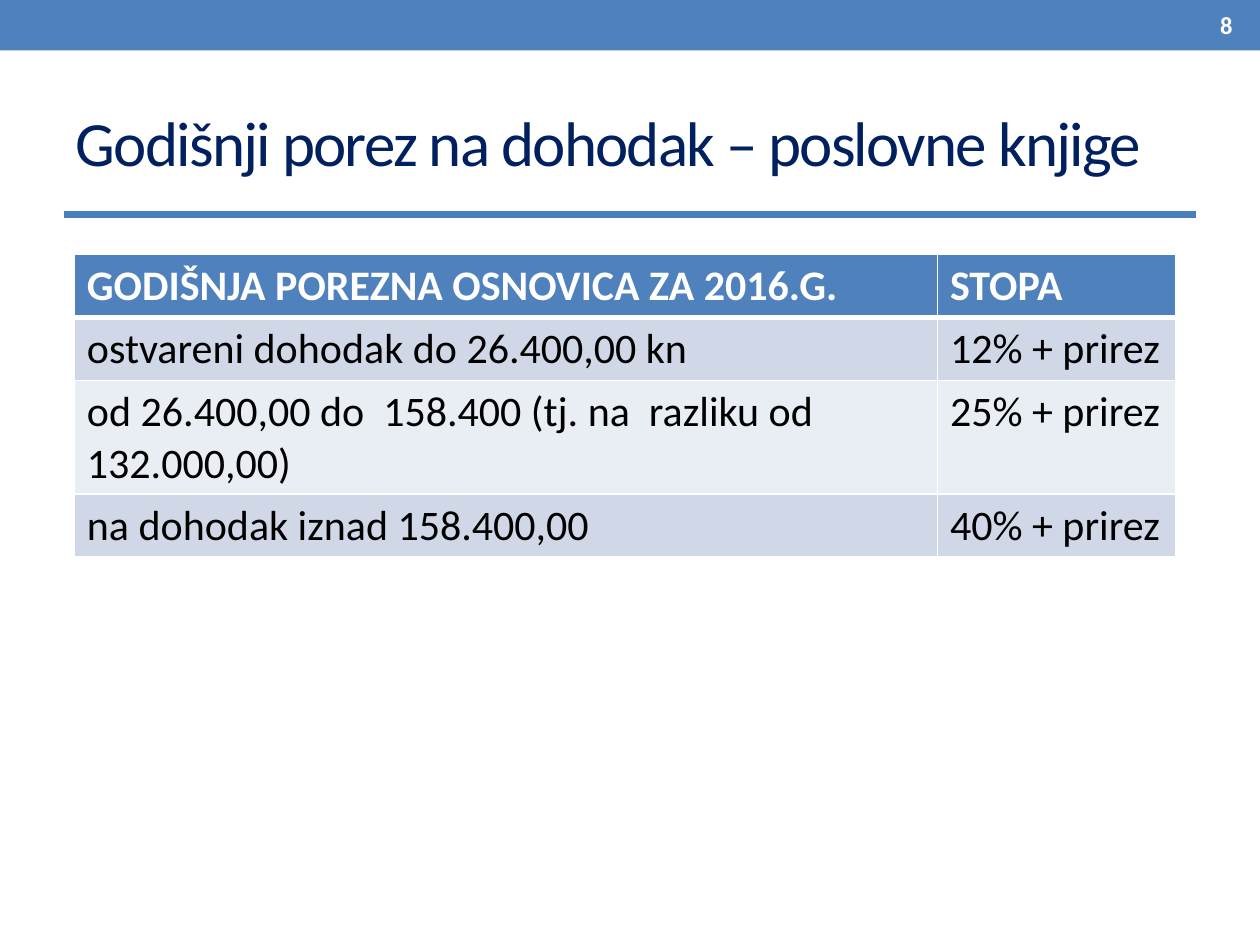
import pptx
import pptx.util
import pptx.dml.color
import pptx.enum.shapes
import pptx.enum.text
import pptx.oxml
import pptx.oxml.ns

Inches, Pt = pptx.util.Inches, pptx.util.Pt
ALIGN, ANCHOR = pptx.enum.text.PP_ALIGN, pptx.enum.text.MSO_ANCHOR

WIDTH, HEIGHT = 10, 7.5
TITLE = "Godišnji porez na dohodak – poslovne knjige"
PAGE_NUMBER = "8"
ROWS = [
    ("GODIŠNJA POREZNA OSNOVICA ZA 2016.G.", "STOPA"),
    ("ostvareni dohodak do 26.400,00 kn", "12% + prirez"),
    ("od 26.400,00 do  158.400 (tj. na  razliku od 132.000,00)", "25% + prirez"),
    ("na dohodak iznad 158.400,00", "40% + prirez"),
]
COLUMN_WIDTHS = (6.85, 1.89)
ROW_HEIGHTS = (0.5, 0.5, 0.9, 0.5)
BLUE, WHITE, BLACK, NAVY = "4F81BD", "FFFFFF", "000000", "002060"
BANDS = ("D0D8E8", "E9EDF4")


def color(value):
    return pptx.dml.color.RGBColor.from_string(value)


def fill(target, value):
    target.fill.solid()
    target.fill.fore_color.rgb = color(value)


def write(tf, text, size, value, bold=False, align=ALIGN.LEFT):
    tf.text = text
    p = tf.paragraphs[0]
    p.alignment = align
    font = p.runs[0].font
    font.name, font.size, font.bold = "Calibri", Pt(size), bold
    font.color.rgb = color(value)


def add_borders(cell, bottom):
    """Draw white cell edges, 1 pt wide except at the bottom."""
    tcPr = cell._tc.get_or_add_tcPr()
    for i, (side, width) in enumerate(zip("LRTB", (1, 1, 1, bottom))):
        tcPr.insert(i, pptx.oxml.parse_xml(
            f'<a:ln{side} {pptx.oxml.ns.nsdecls("a")} w="{Pt(width)}">'
            f'<a:solidFill><a:srgbClr val="{WHITE}"/></a:solidFill></a:ln{side}>'))


prs = pptx.Presentation()
prs.slide_width, prs.slide_height = Inches(WIDTH), Inches(HEIGHT)
s = prs.slides.add_slide(prs.slide_layouts[5])

band = s.shapes.add_shape(pptx.enum.shapes.MSO_SHAPE.RECTANGLE,
                          0, 0, Inches(WIDTH), Inches(0.4))
band.shadow.inherit = False
fill(band, BLUE)
band.line.fill.background()

rule = s.shapes.add_connector(pptx.enum.shapes.MSO_CONNECTOR.STRAIGHT,
                              Inches(0.51), Inches(1.7), Inches(WIDTH - 0.51), Inches(1.7))
rule.line.color.rgb = color("4B7EBC")
rule.line.width = Pt(4)
rule._element.spPr.append(pptx.oxml.parse_xml(
    f'<a:effectLst {pptx.oxml.ns.nsdecls("a")}/>'))

title = s.shapes.title
title.left, title.top, title.width, title.height = map(Inches, (0.5, 0.58, 9, 1.08))
write(title.text_frame, TITLE, 36, NAVY)
title.text_frame.vertical_anchor = ANCHOR.MIDDLE
title.text_frame.paragraphs[0].runs[0].font._element.set("spc", "-100")

number = s.shapes.add_textbox(*map(Inches, (9.09, 0.02, 0.79, 0.36)))
number.text_frame.word_wrap = True
number.text_frame.vertical_anchor = ANCHOR.MIDDLE
write(number.text_frame, PAGE_NUMBER, 14, WHITE, True, ALIGN.RIGHT)

table = s.shapes.add_table(len(ROWS), len(COLUMN_WIDTHS), Inches(0.59), Inches(2.02),
                           Inches(sum(COLUMN_WIDTHS)), Inches(sum(ROW_HEIGHTS))).table
for column, width in zip(table.columns, COLUMN_WIDTHS):
    column.width = Inches(width)
for i, (row, height, texts) in enumerate(zip(table.rows, ROW_HEIGHTS, ROWS)):
    row.height = Inches(height)
    header = i == 0
    for cell, text in zip(row.cells, texts):
        write(cell.text_frame, text, 24, WHITE if header else BLACK, header)
        fill(cell, BLUE if header else BANDS[(i - 1) % 2])
        add_borders(cell, 3 if header else 1)

prs.save("out.pptx")
